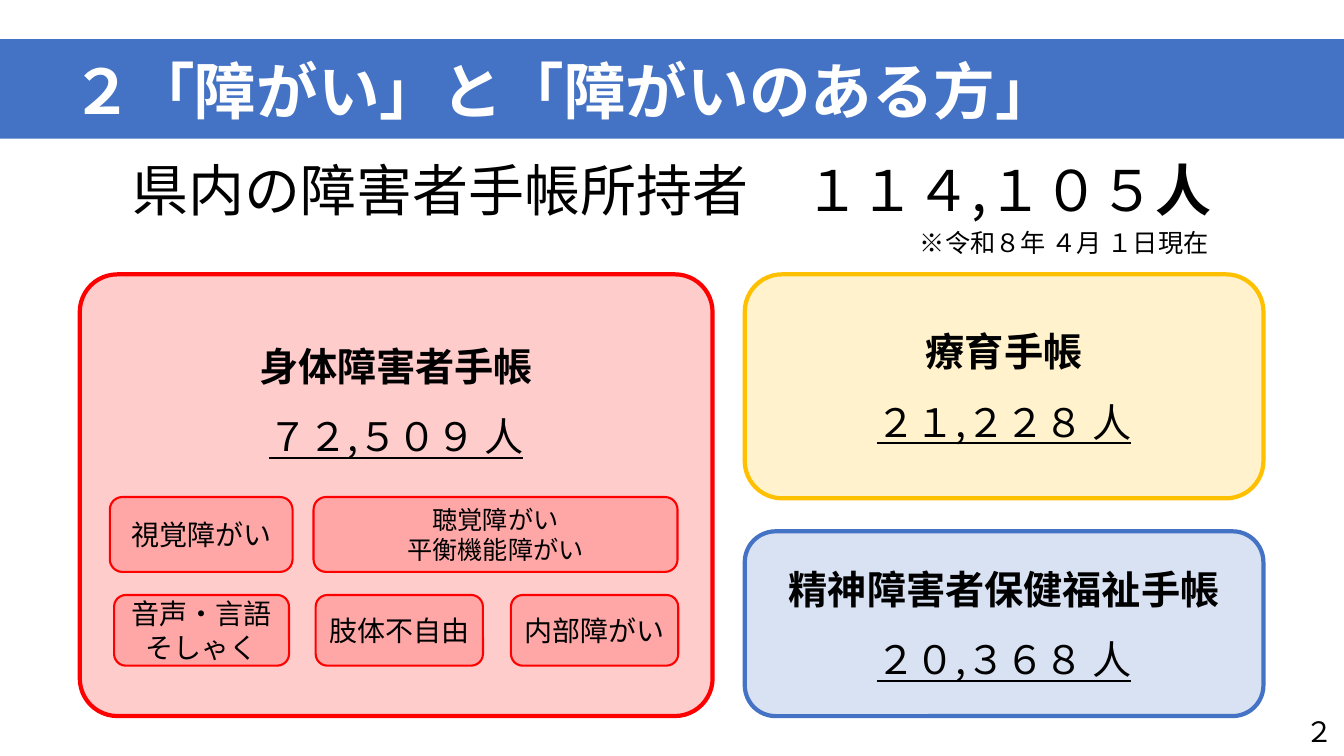
from pptx import Presentation
from pptx.dml.color import RGBColor
from pptx.enum.shapes import MSO_SHAPE as Preset
from pptx.enum.text import MSO_ANCHOR as Anchor, MSO_AUTO_SIZE as AutoSize, PP_ALIGN as Align
from pptx.oxml.ns import qn
from pptx.util import Pt
from lxml.etree import SubElement

FONT = "Noto Sans CJK JP"
BLUE, RED, AMBER = "4472C4", "FF0000", "FFC000"
BLACK, WHITE = "000000", "FFFFFF"


def color(value):
    return RGBColor.from_string(value)


def lengths(box):
    return [Pt(value) for value in box]


def format_run(run, size, bold=False, underline=False, ink=BLACK):
    font = run.font
    font.size, font.bold = Pt(size), bold
    if underline:
        font.underline = True
    font.color.rgb = color(ink)
    font.name = FONT
    east_asian = SubElement(run._r.get_or_add_rPr(), qn("a:ea"))
    east_asian.set("typeface", FONT)


def set_margins(frame, left=7.2, top=3.6, right=7.2, bottom=3.6):
    frame.margin_left, frame.margin_top = Pt(left), Pt(top)
    frame.margin_right, frame.margin_bottom = Pt(right), Pt(bottom)


def add_title(slide, text, box):
    title = slide.shapes.title
    title.left, title.top, title.width, title.height = lengths(box)
    title.fill.solid()
    title.fill.fore_color.rgb = color(BLUE)
    frame = title.text_frame
    frame.text = text
    frame.auto_size = AutoSize.NONE
    frame.vertical_anchor = Anchor.MIDDLE
    set_margins(frame, left=51.2, top=8.6, bottom=0)
    paragraph = frame.paragraphs[0]
    paragraph.alignment = Align.LEFT
    paragraph.line_spacing = 0.9
    format_run(paragraph.runs[0], 44, bold=True, ink=WHITE)


def add_text(slide, text, box, size, wrap=True):
    frame = slide.shapes.add_textbox(*lengths(box)).text_frame
    frame.text = text
    frame.word_wrap = wrap
    format_run(frame.paragraphs[0].runs[0], size)
    return frame


def add_total(slide, text, unit, box):
    frame = add_text(slide, text, box, 40)
    frame.vertical_anchor = Anchor.MIDDLE
    paragraph = frame.paragraphs[0]
    paragraph.alignment = Align.CENTER
    paragraph.line_spacing = 0.9
    run = paragraph.add_run()
    run.text = unit
    format_run(run, 40, bold=True)


def add_rounded_box(slide, text, box, tint, opacity, line_width):
    shape = slide.shapes.add_shape(Preset.ROUNDED_RECTANGLE, *lengths(box))
    shape.shadow.inherit = False
    shape.fill.solid()
    shape.fill.fore_color.rgb = color(tint)
    fill_color = shape._element.spPr.find(qn("a:solidFill"))[0]
    SubElement(fill_color, qn("a:alpha")).set("val", str(opacity * 1000))
    shape.line.color.rgb = color(tint)
    shape.line.width = Pt(line_width)
    frame = shape.text_frame
    frame.text = text
    frame.word_wrap = True
    frame.vertical_anchor = Anchor.MIDDLE
    for paragraph in frame.paragraphs:
        paragraph.alignment = Align.CENTER
    return shape


def add_handbook(slide, name, count, box, tint):
    shape = add_rounded_box(slide, f"{name}\n{count} 人", box, tint, 20, 3)
    set_margins(shape.text_frame)
    heading, number = shape.text_frame.paragraphs
    format_run(heading.runs[0], 28, bold=True)
    number.line_spacing = 1.5
    format_run(number.runs[0], 28, underline=True)
    return shape


def add_category(slide, text, box, size=20):
    shape = add_rounded_box(slide, text, box, RED, 18, 1.5)
    set_margins(shape.text_frame, top=0, bottom=0)
    for paragraph in shape.text_frame.paragraphs:
        format_run(paragraph.runs[0], size)


def add_physical_handbook(slide, box):
    left, top, width, height = box
    shape = add_handbook(slide, "身体障害者手帳", "７２,５０９", box, RED)
    shape.adjustments[0] = 0.085
    shape.text_frame.vertical_anchor = Anchor.TOP
    set_margins(shape.text_frame, top=40.5, bottom=0)
    rows = [
        (159, 53.5, [("視覚障がい", 21.5, 130.5, 20),
                     ("聴覚障がい\n平衡機能障がい", 167, 260, 18)]),
        (229, 50.5, [("音声・言語\nそしゃく", 24.5, 125, 20),
                     ("肢体不自由", 168.5, 119.5, 20),
                     ("内部障がい", 308, 119.5, 20)]),
    ]
    for offset_y, row_height, categories in rows:
        for text, offset_x, category_width, size in categories:
            category_box = (left + offset_x, top + offset_y, category_width, row_height)
            add_category(slide, text, category_box, size)


def add_other_handbooks(slide, box):
    left, top, width, height = box
    upper, lower = 160, 132
    add_handbook(slide, "療育手帳", "２１,２２８", (left, top, width, upper), AMBER)
    add_handbook(slide, "精神障害者保健福祉手帳", "２０,３６８",
                 (left, top + height - lower, width, lower), BLUE)


def main():
    presentation = Presentation()
    presentation.slide_width, presentation.slide_height = Pt(960), Pt(540)
    slide = presentation.slides.add_slide(presentation.slide_layouts[5])
    add_title(slide, "２「障がい」と「障がいのある方」", (0, 28, 960, 71))
    add_total(slide, "県内の障害者手帳所持者　１１４,１０５", "人", (0, 112.5, 960, 52))
    add_text(slide, "※令和８年 ４月 １日現在", (650, 159, 233.5, 29), 18)
    add_physical_handbook(slide, (57, 196, 452, 315.5))
    add_other_handbooks(slide, (532, 196, 370.5, 315.5))
    add_text(slide, "２", (925.5, 507, 34.5, 31.5), 20, wrap=False)
    presentation.save("out.pptx")


if __name__ == "__main__":
    main()
